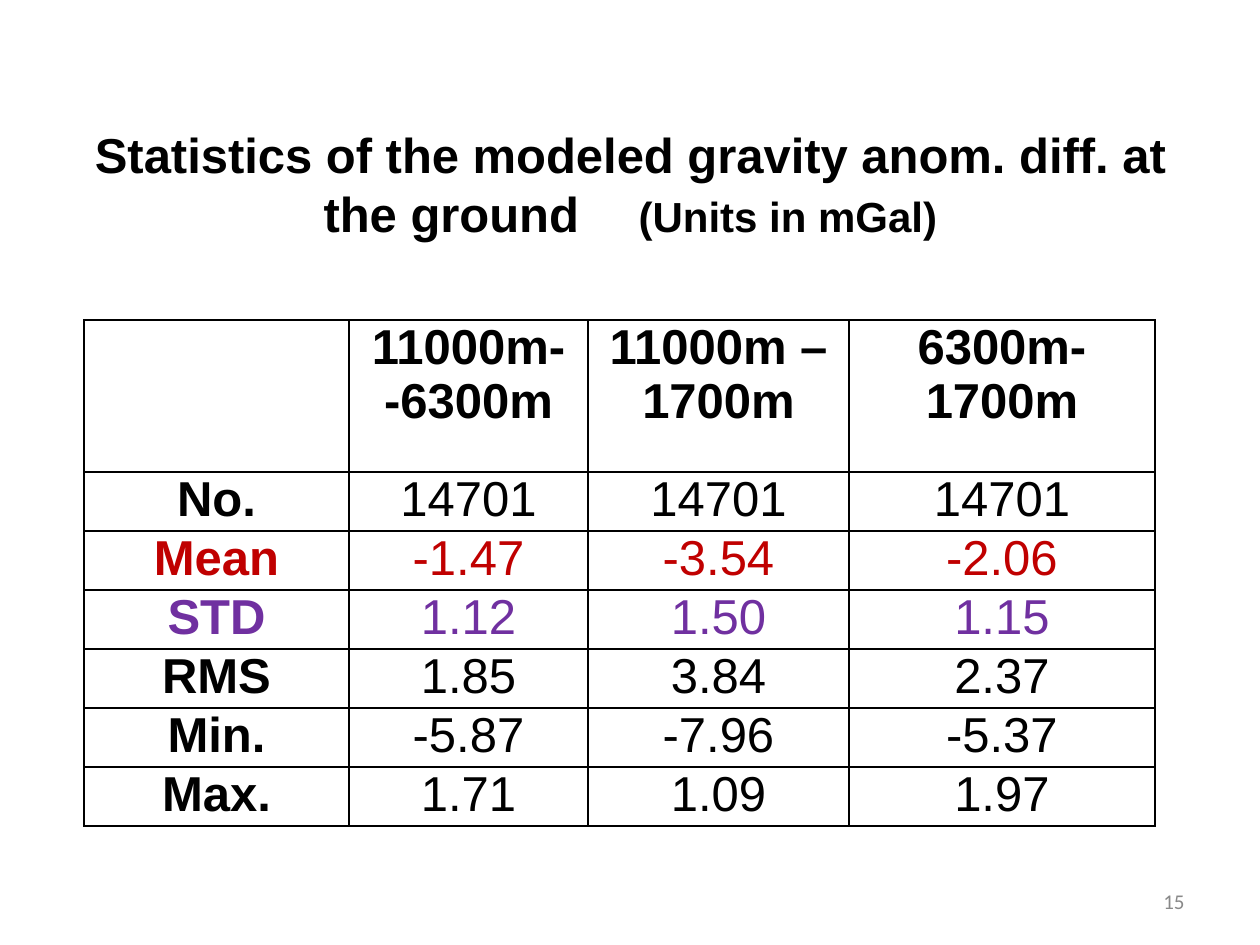
from dataclasses import dataclass

from pptx import Presentation
from pptx.dml.color import RGBColor
from pptx.enum.text import MSO_ANCHOR, MSO_AUTO_SIZE, PP_ALIGN
from pptx.oxml.ns import qn
from pptx.util import Pt
from lxml.etree import SubElement

EMU_PER_INCH = 914400
PX_PER_INCH = 126


@dataclass(frozen=True)
class Theme:
    """Colours, fonts and type sizes of the slide."""

    ink: str = "000000"
    mean: str = "C00000"
    deviation: str = "7030A0"
    muted: str = "898989"
    text_font: str = "Arial"
    number_font: str = "Calibri"
    body_size: int = 28
    unit_size: int = 24
    number_size: int = 12
    border_width: int = 1


THEME = Theme()
COLUMN_WIDTHS = [265, 239, 261, 306]
HEADER_HEIGHT, ROW_HEIGHT = 152, 59
STATISTICS = [
    (["", "11000m-\n-6300m", "11000m –\n1700m", "6300m-\n1700m"], THEME.ink),
    (["No.", "14701", "14701", "14701"], THEME.ink),
    (["Mean", "-1.47", "-3.54", "-2.06"], THEME.mean),
    (["STD", "1.12", "1.50", "1.15"], THEME.deviation),
    (["RMS", "1.85", "3.84", "2.37"], THEME.ink),
    (["Min.", "-5.87", "-7.96", "-5.37"], THEME.ink),
    (["Max.", "1.71", "1.09", "1.97"], THEME.ink),
]


def px(length):
    """Turn pixels into EMU."""
    return round(length * EMU_PER_INCH / PX_PER_INCH)


def set_attributes(target, **values):
    """Set several attributes on one object."""
    for name, value in values.items():
        setattr(target, name, value)


def add_span(para, text, size, color=THEME.ink, bold=False, name=THEME.text_font):
    """Append one formatted run to a paragraph."""
    span = para.add_run()
    span.text = text
    set_attributes(span.font, size=Pt(size), bold=bold, name=name)
    span.font.color.rgb = RGBColor.from_string(color)


def place(shape, left, top, width, height):
    """Position a shape in pixels."""
    set_attributes(shape, left=px(left), top=px(top), width=px(width), height=px(height))


def write_title(page):
    """Fill the title placeholder with the heading and its unit."""
    title = page.shapes.title
    place(title, 53, 118, 1155, 131)
    set_attributes(title.text_frame, word_wrap=True, vertical_anchor=MSO_ANCHOR.MIDDLE,
                   auto_size=MSO_AUTO_SIZE.SHAPE_TO_FIT_TEXT)
    para = title.text_frame.paragraphs[0]
    para.alignment = PP_ALIGN.CENTER
    add_span(para, "Statistics of the modeled gravity anom. diff. at the ground",
             THEME.body_size, bold=True)
    add_span(para, "\t(Units in mGal)", THEME.unit_size, bold=True)


def add_borders(cell):
    """Draw a thin line on all four sides of a cell."""
    properties = cell._tc.get_or_add_tcPr()
    for side in ("lnL", "lnR", "lnT", "lnB"):
        line = SubElement(properties, qn(f"a:{side}"), w=str(Pt(THEME.border_width)))
        fill = SubElement(line, qn("a:solidFill"))
        SubElement(fill, qn("a:srgbClr"), val=THEME.ink)


def write_cell(cell, text, color, bold):
    """Format a table cell and write its centred lines."""
    add_borders(cell)
    cell.fill.background()
    set_attributes(cell, margin_left=px(9), margin_right=px(9), margin_top=0,
                   margin_bottom=0, vertical_anchor=MSO_ANCHOR.TOP)
    if not text:
        return
    frame = cell.text_frame
    for index, line in enumerate(text.split("\n")):
        para = frame.add_paragraph() if index else frame.paragraphs[0]
        para.alignment = PP_ALIGN.CENTER
        add_span(para, line, THEME.body_size, color, bold)


def add_statistics_table(page):
    """Add the table of statistics."""
    heights = [HEADER_HEIGHT] + [ROW_HEIGHT] * (len(STATISTICS) - 1)
    frame = page.shapes.add_table(len(heights), len(COLUMN_WIDTHS), px(84), px(320),
                                  px(sum(COLUMN_WIDTHS)), px(sum(heights)))
    table = frame.table
    set_attributes(table, first_row=False, horz_banding=False)
    for column, width in zip(table.columns, COLUMN_WIDTHS):
        column.width = px(width)
    for row_index, (texts, color) in enumerate(STATISTICS):
        table.rows[row_index].height = px(heights[row_index])
        for column_index, text in enumerate(texts):
            is_heading = row_index == 0 or column_index == 0
            write_cell(table.cell(row_index, column_index), text, color, is_heading)


def add_page_number(page, number):
    """Add the page number at the bottom right."""
    box = page.shapes.add_textbox(px(903), px(876), px(294), px(50))
    set_attributes(box.text_frame, word_wrap=True, vertical_anchor=MSO_ANCHOR.MIDDLE)
    para = box.text_frame.paragraphs[0]
    para.alignment = PP_ALIGN.RIGHT
    add_span(para, number, THEME.number_size, THEME.muted, name=THEME.number_font)


def main():
    """Build and save the slide."""
    deck = Presentation()
    set_attributes(deck, slide_width=px(1260), slide_height=px(945))
    page = deck.slides.add_slide(deck.slide_layouts.get_by_name("Title Only"))
    add_page_number(page, "15")
    add_statistics_table(page)
    write_title(page)
    deck.save("out.pptx")


if __name__ == "__main__":
    main()
